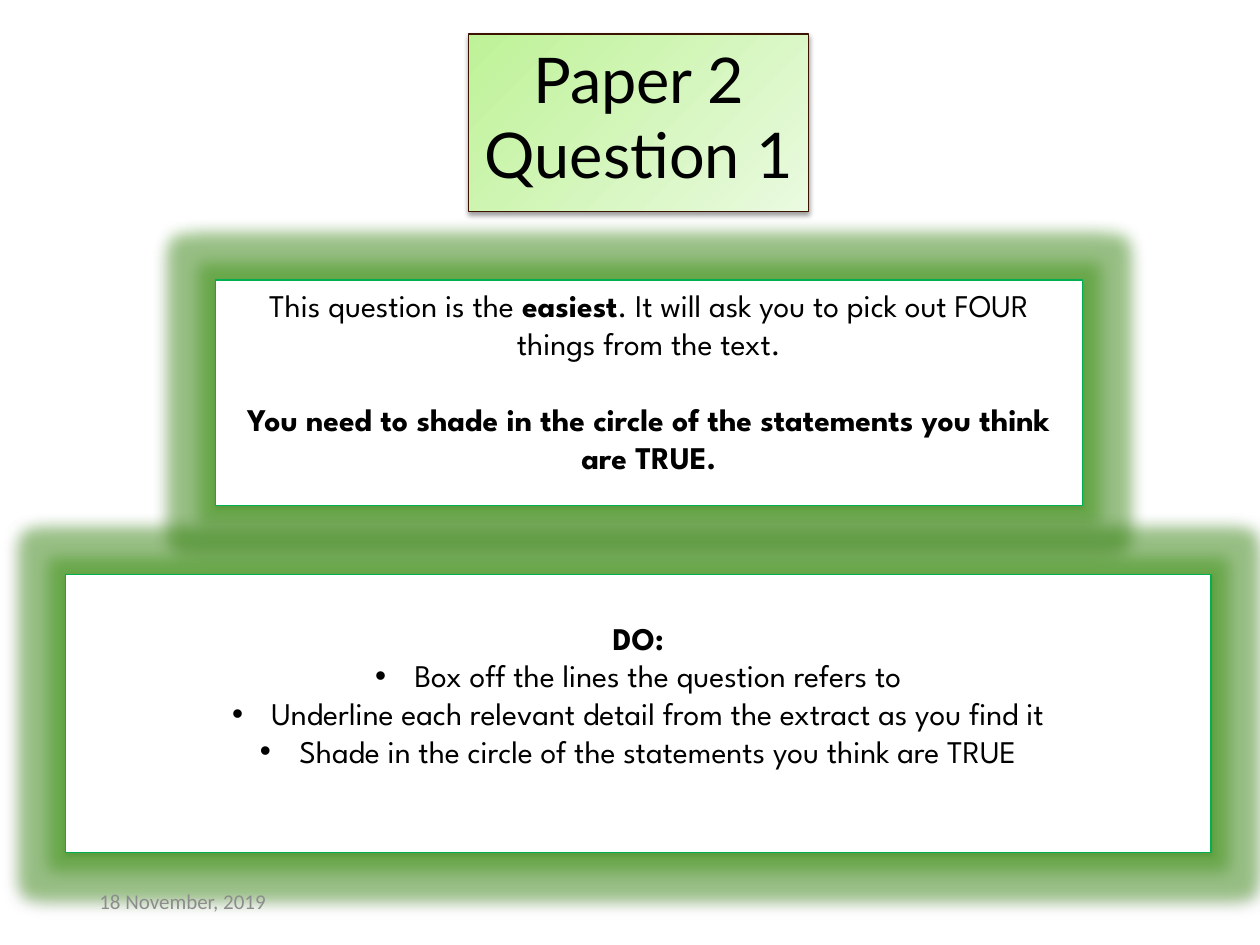
from lxml import etree
from pptx import Presentation
from pptx.enum import shapes, text
from pptx.dml.color import RGBColor
from pptx.oxml import ns
from pptx.util import Pt

COLOURS = {
    "ink": "000000", "paper": "FFFFFF", "date": "8C8C8C",
    "title_line": "3C1301", "title_start": "BEF297", "title_end": "EAFAE0",
    "frame": "00B050", "glow": "389A08", "shadow": "000000",
}
BODY_FONT = "League Spartan"
LINE_HEIGHT = 21.7
BULLET_INDENT = 22.5


def rgb(name):
    return RGBColor.from_string(COLOURS[name])


def add_effect_colour(effect, name, alpha):
    colour = etree.SubElement(effect, ns.qn("a:srgbClr"), val=COLOURS[name])
    etree.SubElement(colour, ns.qn("a:alpha"), val=str(alpha * 1000))


def add_panel(slide, box, line, glow=False):
    panel = slide.shapes.add_shape(
        shapes.MSO_SHAPE.RECTANGLE, *[Pt(length) for length in box])
    panel.shadow.inherit = False
    panel.line.color.rgb = rgb(line)
    panel.line.width = Pt(0.75)
    panel.text_frame.word_wrap = True
    panel.text_frame.vertical_anchor = text.MSO_ANCHOR.TOP
    effects = panel._element.spPr.find(ns.qn("a:effectLst"))
    if glow:
        halo = etree.SubElement(effects, ns.qn("a:glow"), rad=str(Pt(18)))
        add_effect_colour(halo, "glow", 40)
    shadow = etree.SubElement(
        effects, ns.qn("a:outerShdw"), blurRad=str(Pt(3.1)),
        dist=str(Pt(1.6)), dir="5400000", rotWithShape="0")
    add_effect_colour(shadow, "shadow", 38)
    return panel


def format_run(run, font, size, colour="ink", bold=False):
    run.font.name = font
    run.font.size = Pt(size)
    run.font.bold = bold
    run.font.color.rgb = rgb(colour)


def write_paragraph(paragraph, parts):
    paragraph.alignment = text.PP_ALIGN.CENTER
    for words, bold in parts:
        run = paragraph.add_run()
        run.text = words
        format_run(run, BODY_FONT, 18, bold=bold)


def add_bullet(paragraph):
    properties = paragraph._p.get_or_add_pPr()
    properties.set("marL", str(Pt(BULLET_INDENT)))
    properties.set("indent", str(-Pt(BULLET_INDENT)))
    etree.SubElement(properties, ns.qn("a:buFont"), typeface="Arial")
    etree.SubElement(properties, ns.qn("a:buChar"), char="•")


def add_title(slide, box):
    title = add_panel(slide, box, "title_line")
    title.fill.gradient()
    title.fill.gradient_angle = 315
    for stop, name in zip(title.fill.gradient_stops,
                          ("title_start", "title_end")):
        stop.color.rgb = rgb(name)
    title.text_frame.text = "Paper 2\nQuestion 1"
    for paragraph in title.text_frame.paragraphs:
        paragraph.alignment = text.PP_ALIGN.CENTER
        format_run(paragraph.runs[0], "Lato", 36)


def add_framed_panel(slide, box):
    panel = add_panel(slide, box, "frame", glow=True)
    panel.fill.solid()
    panel.fill.fore_color.rgb = rgb("paper")
    return panel.text_frame


def add_overview(slide, box):
    overview = add_framed_panel(slide, box)
    write_paragraph(overview.paragraphs[0], [
        ("This question is the ", False), ("easiest", True),
        (". It will ask you to pick out FOUR things from the text.", False)])
    task = overview.add_paragraph()
    task.space_before = Pt(LINE_HEIGHT)
    write_paragraph(task, [
        ("You need to shade in the circle of the statements you think "
         "are TRUE.", True)])


def add_checklist(slide, box, steps):
    checklist = add_framed_panel(slide, box)
    checklist.margin_top = Pt(3.6 + LINE_HEIGHT)
    write_paragraph(checklist.paragraphs[0], [("DO:", True)])
    for step in steps:
        paragraph = checklist.add_paragraph()
        write_paragraph(paragraph, [(step, False)])
        add_bullet(paragraph)


def add_date(slide, box):
    date = slide.shapes.add_textbox(*[Pt(length) for length in box]).text_frame
    date.word_wrap = True
    date.vertical_anchor = text.MSO_ANCHOR.MIDDLE
    date.text = "18 November, 2019"
    format_run(date.paragraphs[0].runs[0], "Calibri", 12, "date")


def main():
    deck = Presentation()
    deck.slide_width, deck.slide_height = Pt(720), Pt(540)
    slide = deck.slides.add_slide(deck.slide_layouts[6])
    add_title(slide, (267.8, 19.4, 194.4, 101.5))
    add_overview(slide, (123.1, 160, 495.4, 129))
    add_checklist(slide, (37.6, 328.2, 654.4, 159.2), [
        "Box off the lines the question refers to",
        "Underline each relevant detail from the extract as you find it",
        "Shade in the circle of the statements you think are TRUE"])
    add_date(slide, (49.7, 500.4, 162, 28.8))
    deck.save("out.pptx")


if __name__ == "__main__":
    main()
